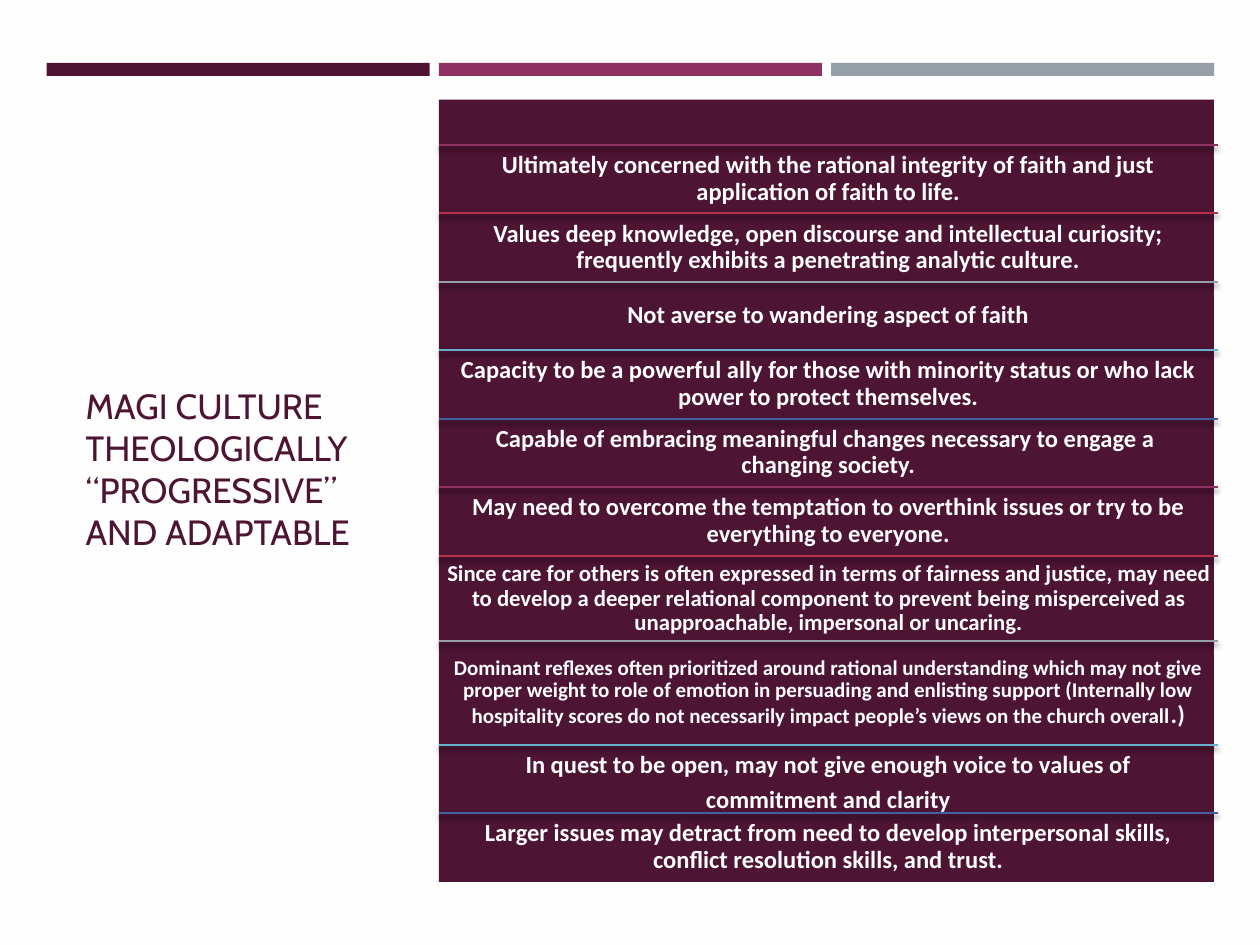
from dataclasses import dataclass
from itertools import cycle

from lxml.etree import SubElement
from pptx import Presentation
from pptx.dml.color import RGBColor
from pptx.enum.shapes import MSO_CONNECTOR, MSO_SHAPE
from pptx.enum.text import MSO_ANCHOR, MSO_AUTO_SIZE, PP_ALIGN
from pptx.oxml.ns import qn
from pptx.shapes.connector import Connector
from pptx.shapes.shapetree import GroupShapes, SlideShapes
from pptx.text.text import TextFrame, _Paragraph
from pptx.util import Emu, Pt

PIXELS_PER_INCH = 300
WHITE, PLUM, MAGENTA, GRAY = "FFFFFF", "4D1434", "903163", "969FA7"
ACCENTS = (MAGENTA, "B2324B", GRAY, "66B1CE", "40619D")
COLUMN_LEFT, ROW_WIDTH, FIRST_ROW_TOP = 1045, 1854, 345


@dataclass(frozen=True)
class Row:
    text: str
    height: int = 163
    size: int = 14
    inset: int = 18
    anchor: MSO_ANCHOR = MSO_ANCHOR.TOP
    ending: str = ""


ROWS = (
    Row("Ultimately concerned with the rational integrity of faith and just application of faith to life."),
    Row("Values deep knowledge, open discourse and intellectual curiosity; "
        "frequently exhibits a penetrating analytic culture."),
    Row("Not averse to wandering aspect of faith", anchor=MSO_ANCHOR.MIDDLE),
    Row("Capacity to be a powerful ally for those with minority status or who lack power to protect themselves."),
    Row("Capable of embracing meaningful changes necessary to engage a \vchanging society."),
    Row("May need to overcome the temptation to overthink issues or try to be everything to everyone."),
    Row("Since care for others is often expressed in terms of fairness and justice, may need to develop "
        "a deeper relational component to prevent being misperceived as unapproachable, impersonal or uncaring.",
        height=204, size=13, inset=15),
    Row("Dominant reflexes often prioritized around rational understanding which may not give proper weight "
        "to role of emotion in persuading and enlisting support (Internally low hospitality scores do not "
        "necessarily impact people’s views on the church overall",
        height=246, size=12, inset=15, anchor=MSO_ANCHOR.MIDDLE, ending=".)"),
    Row("In quest to be open, may not give enough voice to values of\ncommitment and clarity"),
    Row("Larger issues may detract from need to develop interpersonal skills, "
        "conflict resolution skills, and trust."),
)


def px(length: int) -> Emu:
    return Emu(length * 914400 // PIXELS_PER_INCH)


def color(value: str) -> RGBColor:
    return RGBColor.from_string(value)


def write(para: _Paragraph, text: str, *, size: int, font: str, fill: str, bold: bool = False) -> None:
    for index, line in enumerate(text.split("\v")):
        if index:
            para.add_line_break()
        span = para.add_run()
        span.text = line
        span.font.name = font
        span.font.size = Pt(size)
        span.font.bold = bold
        span.font.color.rgb = color(fill)


def set_frame(frame: TextFrame, anchor: MSO_ANCHOR, horizontal: int, vertical: int) -> None:
    frame.word_wrap = True
    frame.auto_size = MSO_AUTO_SIZE.NONE
    frame.vertical_anchor = anchor
    frame.margin_left = frame.margin_right = px(horizontal)
    frame.margin_top = frame.margin_bottom = px(vertical)


def add_block(shapes: SlideShapes, left: int, top: int, width: int, height: int, fill: str) -> None:
    block = shapes.add_shape(MSO_SHAPE.RECTANGLE, px(left), px(top), px(width), px(height))
    block.shadow.inherit = False
    block.fill.solid()
    block.fill.fore_color.rgb = color(fill)
    block.line.fill.background()


def add_shadow(rule: Connector) -> None:
    effects = SubElement(rule._element.spPr, qn("a:effectLst"))
    shadow = SubElement(effects, qn("a:outerShdw"), blurRad=str(Pt(3)), dist=str(Pt(2)),
                        dir="5400000", algn="ctr", rotWithShape="0")
    shade = SubElement(shadow, qn("a:srgbClr"), val="000000")
    SubElement(shade, qn("a:alpha"), val="55000")


def add_row(shapes: GroupShapes, row: Row, top: int, accent: str) -> None:
    rule = shapes.add_connector(MSO_CONNECTOR.STRAIGHT, px(COLUMN_LEFT), px(top),
                                px(COLUMN_LEFT + ROW_WIDTH), px(top))
    rule.line.color.rgb = color(accent)
    rule.line.width = Pt(1)
    add_shadow(rule)
    box = shapes.add_textbox(px(COLUMN_LEFT), px(top), px(ROW_WIDTH), px(row.height))
    frame = box.text_frame
    set_frame(frame, row.anchor, row.inset, row.inset)
    for index, text in enumerate(row.text.split("\n")):
        para = frame.add_paragraph() if index else frame.paragraphs[0]
        para.alignment = PP_ALIGN.CENTER
        para.line_spacing = 0.9
        para.space_after = Pt(row.size * 0.35)
        write(para, text, size=row.size, font="Calibri", fill=WHITE, bold=True)
    if row.ending:
        write(para, row.ending, size=14, font="Calibri", fill=WHITE, bold=True)


def main() -> None:
    deck = Presentation()
    deck.slide_width, deck.slide_height = px(3000), px(2250)
    page = deck.slides.add_slide(deck.slide_layouts[5])
    add_block(page.shapes, 0, 0, 3000, 2250, "FFFEFF")

    title = page.shapes.title
    page.shapes._spTree.append(title._element)
    title.left, title.top, title.width, title.height = px(183), px(342), px(750), px(1545)
    set_frame(title.text_frame, MSO_ANCHOR.MIDDLE, 21, 12)
    heading = title.text_frame.paragraphs[0]
    heading.alignment = PP_ALIGN.LEFT
    write(heading, "MAGI CULTURE\vTHEOLOGICALLY “PROGRESSIVE” AND ADAPTABLE",
          size=20, font="Cabin", fill=PLUM)

    for index, fill in enumerate((PLUM, MAGENTA, GRAY)):
        add_block(page.shapes, 111 + 934 * index, 150, 912, 31, fill)
    add_block(page.shapes, COLUMN_LEFT, 237, 1845, 1863, PLUM)

    traits = page.shapes.add_group_shape()
    top = FIRST_ROW_TOP
    for row, accent in zip(ROWS, cycle(ACCENTS)):
        add_row(traits.shapes, row, top, accent)
        top += row.height

    deck.save("out.pptx")


if __name__ == "__main__":
    main()
